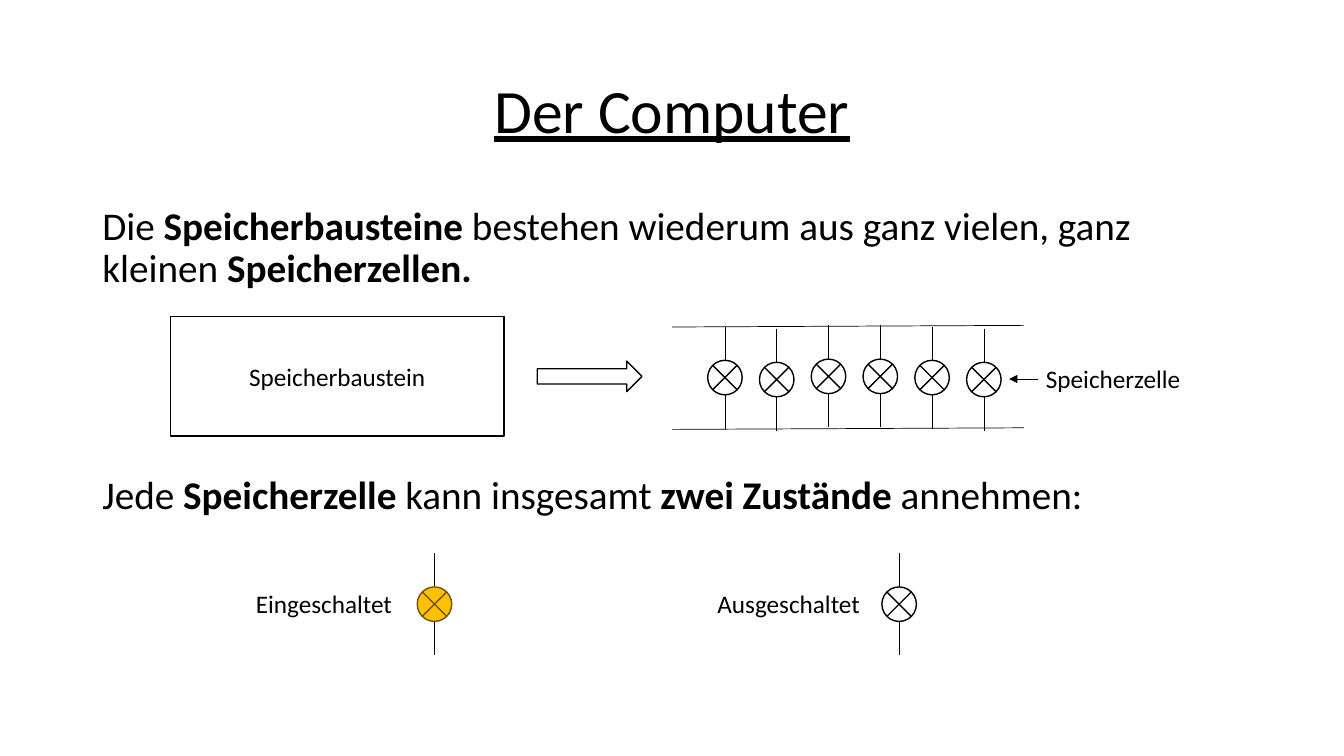
from lxml import etree
from pptx import Presentation
from pptx.dml.color import RGBColor
from pptx.enum.shapes import MSO_CONNECTOR as Connector, MSO_SHAPE as Shape
from pptx.enum.text import MSO_ANCHOR as Anchor, MSO_AUTO_SIZE as AutoSize, PP_ALIGN as Align
from pptx.oxml.ns import qn
from pptx.util import Cm, Pt

# Content
COLORS = {"black": "000000", "white": "FFFFFF", "lit": "FFC000", "lit_edge": "705400"}
FONT = "Calibri"
TITLE = "Der Computer"
# Each sentence: space before in points, then (text, bold) runs
SENTENCES = [
    (10, [("Die ", False), ("Speicherbausteine", True),
          (" bestehen wiederum aus ganz vielen, ganz kleinen ", False),
          ("Speicherzellen.", True)]),
    (132, [("Jede ", False), ("Speicherzelle", True), (" kann insgesamt ", False),
           ("zwei Zustände ", True), ("annehmen:", False)]),
]
# Labels: text, left, top, width in cm
LABELS = [
    ("Eingeschaltet", 6.2, 14.71, 3.99),
    ("Ausgeschaltet", 17.83, 14.71, 4.14),
    ("Speicherzelle", 26.11, 9.02, 3.94),
]
# States: centre, fill, edge
STATES = [(10.95, "lit", "lit_edge"), (22.66, "white", "black")]
STATE_TOP = 13.94

# Memory cells: evenly spaced, each hanging at its own height
CELL_LEFT, CELL_PITCH = 18.27, 1.305
CELL_TOPS = [8.23, 8.28, 8.2, 8.2, 8.23, 8.28]
RAILS = [(8.24, 8.2), (10.82, 10.78)]
LAMP, WIRE = 0.87, 0.85

presentation = Presentation()
presentation.slide_width, presentation.slide_height = Cm(33.87), Cm(19.05)
slide = presentation.slides.add_slide(presentation.slide_layouts[6])


def color(name):
    return RGBColor.from_string(COLORS[name])


def style(font, size):
    font.name, font.size = FONT, Pt(size)
    font.color.rgb = color("black")


def add_text_box(left, top, width, height, wrap=True):
    box = slide.shapes.add_textbox(Cm(left), Cm(top), Cm(width), Cm(height))
    box.text_frame.word_wrap = wrap
    return box.text_frame


def add_outlined(kind, left, top, width, height, fill="white", edge="black"):
    shape = slide.shapes.add_shape(kind, Cm(left), Cm(top), Cm(width), Cm(height))
    shape.shadow.inherit = False
    shape.fill.solid()
    shape.fill.fore_color.rgb = color(fill)
    shape.line.color.rgb = color(edge)
    shape.line.width = Pt(1)
    return shape


def add_line(x1, y1, x2, y2, arrow=False):
    line = slide.shapes.add_connector(Connector.STRAIGHT, Cm(x1), Cm(y1), Cm(x2), Cm(y2))
    line.line.color.rgb = color("black")
    line.line.width = Pt(0.5)
    properties = line._element.spPr
    if arrow:
        etree.SubElement(properties.find(qn("a:ln")), qn("a:tailEnd"), type="triangle")
    etree.SubElement(properties, qn("a:effectLst"))


def add_lamp(center, top, fill="white", edge="black"):
    lamp_top = top + WIRE
    lamp_bottom = lamp_top + LAMP
    add_line(center, top, center, lamp_top)
    add_line(center, lamp_bottom, center, lamp_bottom + WIRE)
    add_outlined(Shape.FLOWCHART_SUMMING_JUNCTION, center - LAMP / 2, lamp_top,
                 LAMP, LAMP, fill, edge)


# Title
frame = add_text_box(2.33, 1.01, 29.21, 3.68)
frame.vertical_anchor = Anchor.MIDDLE
paragraph = frame.paragraphs[0]
paragraph.text = TITLE
paragraph.alignment, paragraph.line_spacing = Align.CENTER, 0.9
style(paragraph.font, 44)
paragraph.font.underline = True

# Sentences
frame = add_text_box(2.33, 5.07, 29.21, 8.31)
for index, (space, runs) in enumerate(SENTENCES):
    paragraph = frame.add_paragraph() if index else frame.paragraphs[0]
    paragraph.line_spacing, paragraph.space_before = 0.9, Pt(space)
    style(paragraph.font, 28)
    for text, bold in runs:
        run = paragraph.add_run()
        run.text, run.font.bold = text, bold

# Memory block and the arrow to its cells
block = add_outlined(Shape.RECTANGLE, 4.3, 7.97, 8.4, 3.02)
block.text_frame.vertical_anchor = Anchor.MIDDLE
paragraph = block.text_frame.paragraphs[0]
paragraph.text, paragraph.alignment = "Speicherbaustein", Align.CENTER
style(paragraph.font, 18)
add_outlined(Shape.RIGHT_ARROW, 13.54, 9.1, 2.64, 0.77)

# Row of cells between two rails
for left_y, right_y in RAILS:
    add_line(16.94, left_y, 25.8, right_y)
for index, top in enumerate(CELL_TOPS):
    add_lamp(CELL_LEFT + index * CELL_PITCH, top)
add_line(26.16, 9.55, 25.43, 9.55, arrow=True)

# The two states
for center, fill, edge in STATES:
    add_lamp(center, STATE_TOP, fill, edge)

# Labels
for text, left, top, width in LABELS:
    frame = add_text_box(left, top, width, 1.02, wrap=False)
    frame.auto_size = AutoSize.SHAPE_TO_FIT_TEXT
    frame.paragraphs[0].text = text
    style(frame.paragraphs[0].font, 18)

presentation.save("out.pptx")
